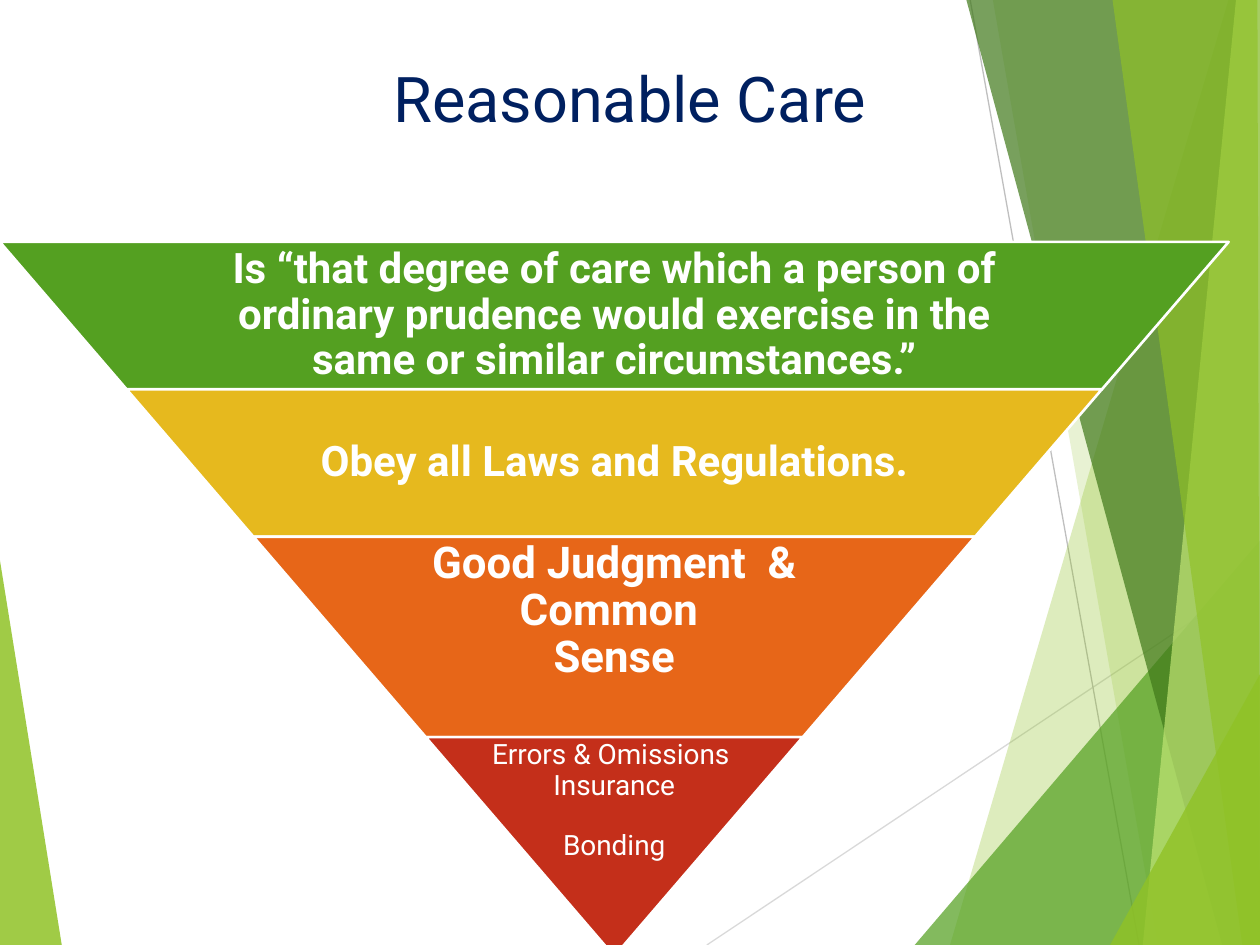
from lxml.etree import SubElement
from pptx import Presentation
from pptx.dml.color import RGBColor
from pptx.enum.shapes import MSO_CONNECTOR, MSO_SHAPE
from pptx.enum.text import MSO_ANCHOR, PP_ALIGN
from pptx.oxml.ns import qn
from pptx.util import Inches, Pt

WIDTH, HEIGHT = 10, 7.5
FONT = "Roboto"
TITLE = "Reasonable Care"

# Decoration: corner points, colour, opacity in percent
LEFT_WEDGE = ([(0, 4.45), (0.49, HEIGHT), (0, HEIGHT)], "90C226", 85)
THIN_LINES = [
    ((5.61, HEIGHT), (WIDTH, 4.57), "D9D9D9"),
    ((7.7, 0), (9.04, HEIGHT), "BFBFBF"),
]
RIGHT_FACETS = [
    ([(9.75, 0), (7.54, HEIGHT), (WIDTH, HEIGHT), (WIDTH, 0)], "90C226", 30),
    ([(7.88, 0), (9.19, HEIGHT), (WIDTH, HEIGHT), (WIDTH, 0)], "90C226", 20),
    ([(7.26, HEIGHT), (WIDTH, 4.29), (WIDTH, HEIGHT)], "54A021", 72),
    ([(7.67, 0), (9.7, HEIGHT), (WIDTH, HEIGHT), (WIDTH, 0)], "3F7819", 70),
    ([(9.81, 0), (9.07, HEIGHT), (WIDTH, HEIGHT), (WIDTH, 0)], "C0E474", 70),
    ([(8.83, 0), (9.86, HEIGHT), (WIDTH, HEIGHT), (9.98, 0)], "90C226", 65),
    ([(8.81, HEIGHT), (WIDTH, 5.35), (WIDTH, HEIGHT)], "90C226", 80),
]

# Inverted pyramid, from top to tip; a paragraph is (text, space before in points)
PYRAMID_TOP, PYRAMID_CENTRE = 1.92, 4.875
SLOPE = 0.86  # horizontal run of a side per inch of height
LEVELS = [
    dict(height=1.17, fill="54A021", size=24, bold=True, text_share=0.65,
         anchor=MSO_ANCHOR.MIDDLE, paragraphs=[
             ("Is “that degree of care which a person of ordinary prudence "
              "would exercise in the same or similar circumstances.”", 0)]),
    dict(height=1.17, fill="E6B91E", size=24, bold=True, text_share=0.65,
         anchor=MSO_ANCHOR.MIDDLE,
         paragraphs=[("Obey all Laws and Regulations.", 0)]),
    dict(height=1.59, fill="E76618", size=25, bold=True, text_share=0.65,
         anchor=MSO_ANCHOR.TOP,
         paragraphs=[("Good Judgment  & Common ", 0), ("Sense", 0)]),
    dict(height=1.74, fill="C42F1A", size=16, bold=False, text_share=1,
         anchor=MSO_ANCHOR.TOP,
         paragraphs=[("Errors & Omissions ", 0), ("Insurance", 0), ("Bonding", 17)]),
]


def color(hex_string):
    return RGBColor.from_string(hex_string)


def fill_solid(shape, hex_string, opacity=100):
    shape.shadow.inherit = False
    shape.fill.solid()
    shape.fill.fore_color.rgb = color(hex_string)
    if opacity < 100:
        value = next(shape.fill._xPr.iter(qn("a:srgbClr")))
        SubElement(value, qn("a:alpha"), val=str(opacity * 1000))


def add_facet(slide, points, hex_string, opacity):
    start, *rest = [(Inches(x), Inches(y)) for x, y in points]
    builder = slide.shapes.build_freeform(*start)
    builder.add_line_segments(rest, close=True)
    facet = builder.convert_to_shape()
    fill_solid(facet, hex_string, opacity)
    facet.line.fill.background()


def add_thin_line(slide, start, end, hex_string):
    line = slide.shapes.add_connector(
        MSO_CONNECTOR.STRAIGHT, *[Inches(value) for value in start + end])
    line.line.color.rgb = color(hex_string)
    line.line.width = Pt(0.75)
    SubElement(line._element.spPr, qn("a:effectLst"))


def add_run(paragraph, text, size, hex_string, bold=False):
    paragraph.alignment = PP_ALIGN.CENTER
    run = paragraph.add_run()
    run.text = text
    run.font.name = FONT
    run.font.size = Pt(size)
    run.font.bold = bold
    run.font.color.rgb = color(hex_string)


def centred_box(top, width, height):
    return [Inches(value) for value in (PYRAMID_CENTRE - width / 2, top, width, height)]


def add_level(slide, level, top, width):
    height = level["height"]
    band = slide.shapes.add_shape(MSO_SHAPE.TRAPEZOID, *centred_box(top, width, height))
    band.rotation = 180
    band.adjustments[0] = SLOPE
    fill_solid(band, level["fill"])
    band.line.color.rgb = color("FFFFFF")
    band.line.width = Pt(1.5)

    text_width = width * level["text_share"]
    frame = slide.shapes.add_textbox(*centred_box(top, text_width, height)).text_frame
    frame.word_wrap = True
    frame.vertical_anchor = level["anchor"]
    frame.margin_left = frame.margin_right = Inches(0.03)
    frame.margin_top = frame.margin_bottom = Inches(0.03)
    for index, (text, space_before) in enumerate(level["paragraphs"]):
        paragraph = frame.add_paragraph() if index else frame.paragraphs[0]
        paragraph.line_spacing = 0.9
        paragraph.space_before = Pt(space_before)
        add_run(paragraph, text, level["size"], "FFFFFF", level["bold"])


def add_pyramid(slide):
    """Stack the levels; each is as wide as the height left below its top allows."""
    top = PYRAMID_TOP
    remaining = sum(level["height"] for level in LEVELS)
    for level in LEVELS:
        add_level(slide, level, top, 2 * SLOPE * remaining)
        top += level["height"]
        remaining -= level["height"]


def add_title(slide):
    title = slide.shapes.title
    title.left, title.top = Inches(0.5), Inches(0.42)
    title.width, title.height = Inches(9), Inches(1.25)
    title.text_frame.vertical_anchor = MSO_ANCHOR.TOP
    add_run(title.text_frame.paragraphs[0], TITLE, 36, "002060")


def main():
    presentation = Presentation()
    presentation.slide_width, presentation.slide_height = Inches(WIDTH), Inches(HEIGHT)
    slide = presentation.slides.add_slide(presentation.slide_layouts[5])
    add_title(slide)
    add_facet(slide, *LEFT_WEDGE)
    for line in THIN_LINES:
        add_thin_line(slide, *line)
    for facet in RIGHT_FACETS:
        add_facet(slide, *facet)
    add_pyramid(slide)
    presentation.save("out.pptx")


if __name__ == "__main__":
    main()
